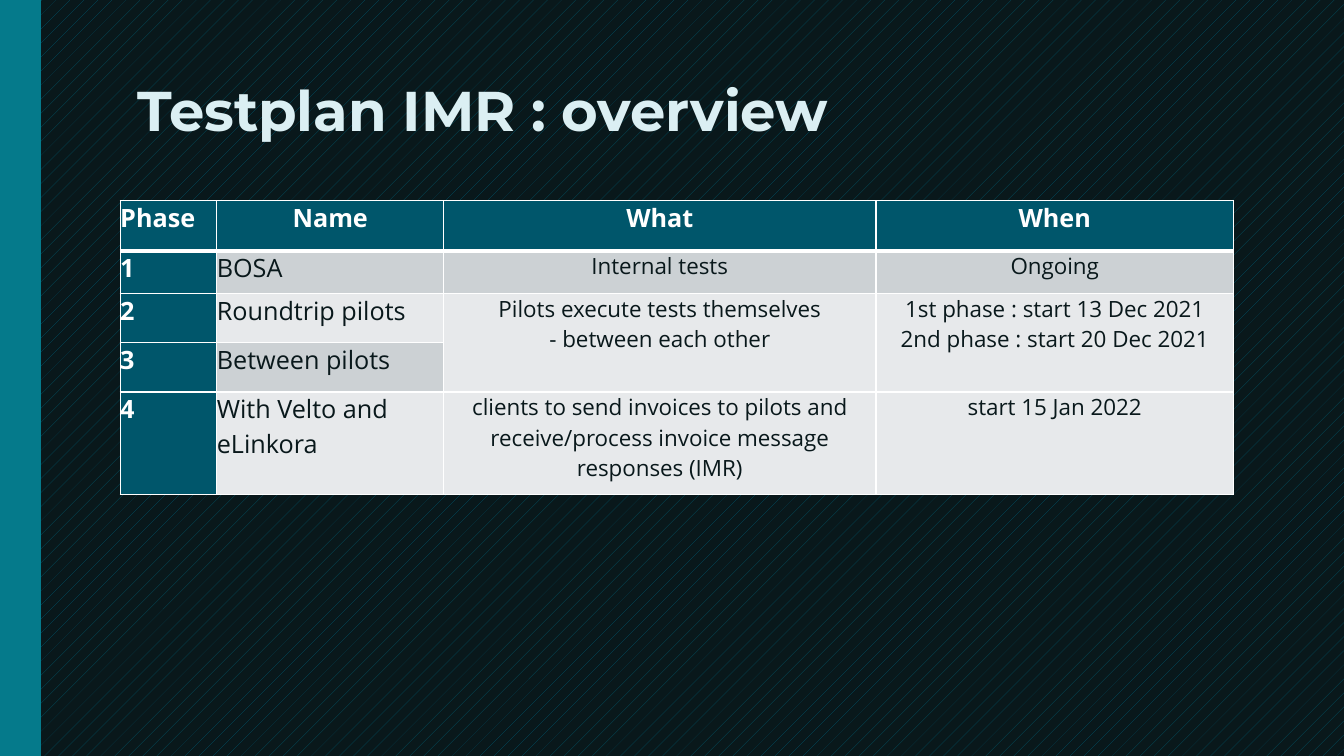
from pptx import Presentation
from pptx import util as u
from pptx.dml import color
from pptx.enum import dml, shapes, text
from pptx.oxml import parse_xml
from pptx.oxml import ns

CENTER = text.PP_ALIGN.CENTER
LEFT = text.PP_ALIGN.LEFT

COLUMN_WIDTHS = [69, 162, 308.8, 255.5]
ROW_HEIGHTS = [36, 30.2, 35.3, 35.3, 73.4]
ROWS = [
    ["Phase", "Name", "What", "When"],
    ["1", "BOSA", "Internal tests", "Ongoing"],
    ["2", "Roundtrip pilots",
     "Pilots execute tests themselves\n- between each other",
     "1st phase : start 13 Dec 2021\n2nd phase : start 20 Dec 2021"],
    ["3", "Between pilots", "", ""],
    ["4", "With Velto and eLinkora",
     "clients to send invoices to pilots and receive/process invoice message responses (IMR)",
     "start 15 Jan 2022"],
]


def rgb(value):
    return color.RGBColor.from_string(value)


def write_text(frame, content, size=18, font="Open Sans", hex_color="09181B",
               bold=False, align=LEFT, line_spacing=None):
    for index, line in enumerate(content.split("\n")):
        paragraph = frame.add_paragraph() if index else frame.paragraphs[0]
        paragraph.alignment = align
        paragraph.line_spacing = line_spacing
        run = paragraph.add_run()
        run.text = line
        run.font.size = u.Pt(size)
        run.font.name = font
        run.font.bold = bold
        run.font.color.rgb = rgb(hex_color)


class SlideBuilder:
    dark = "09181B"
    petrol = "00566B"
    teal = "057A8B"
    pale = "DBEFF3"
    white = "FFFFFF"
    bands = ["E7E9EB", "CCD1D4"]

    def __init__(self, presentation):
        self.slide = presentation.slides.add_slide(presentation.slide_layouts[6])

    def background(self):
        fill = self.slide.background.fill
        fill.patterned()
        fill.pattern = dml.MSO_PATTERN.PERCENT_5
        fill.fore_color.rgb = rgb(self.petrol)
        fill.back_color.rgb = rgb(self.dark)

    def side_bar(self, x, top, bottom, width):
        bar = self.slide.shapes.add_connector(
            shapes.MSO_CONNECTOR.STRAIGHT, u.Pt(x), u.Pt(top), u.Pt(x), u.Pt(bottom))
        bar.line.width = u.Pt(width)
        bar.line.color.rgb = rgb(self.teal)
        bar._element.spPr.append(parse_xml(f"<a:effectLst {ns.nsdecls('a')}/>"))

    def title(self, content, left, top, width, height):
        box = self.slide.shapes.add_textbox(u.Pt(left), u.Pt(top), u.Pt(width), u.Pt(height))
        frame = box.text_frame
        frame.word_wrap = True
        frame.vertical_anchor = text.MSO_ANCHOR.MIDDLE
        frame.margin_left = u.Pt(17.7)
        write_text(frame, content, size=40, font="Montserrat", hex_color=self.pale,
                   bold=True, line_spacing=0.9)

    def borders(self, cell, row):
        widths = {"L": 1, "R": 1, "T": 3 if row == 1 else 1, "B": 3 if row == 0 else 1}
        properties = cell._tc.get_or_add_tcPr()
        for side, width in widths.items():
            properties.append(parse_xml(
                f'<a:ln{side} {ns.nsdecls("a")} w="{u.Pt(width)}"><a:solidFill>'
                f'<a:srgbClr val="{self.white}"/></a:solidFill></a:ln{side}>'))

    def cell(self, cell, content, row, column):
        heading = row == 0 or column == 0
        self.borders(cell, row)
        cell.fill.solid()
        cell.fill.fore_color.rgb = rgb(self.petrol if heading else self.bands[row % 2])
        cell.margin_left = cell.margin_right = cell.margin_top = cell.margin_bottom = 0
        centered = column > 1 or (row == 0 and column == 1)
        write_text(cell.text_frame, content,
                   size=18 if heading or column == 1 else 16,
                   hex_color=self.white if heading else self.dark,
                   bold=heading, align=CENTER if centered else LEFT)

    def table(self, rows, left, top, widths, heights):
        frame = self.slide.shapes.add_table(
            len(rows), len(widths), u.Pt(left), u.Pt(top),
            u.Pt(sum(widths)), u.Pt(sum(heights)))
        table = frame.table
        table.first_row = table.horz_banding = False
        for column, width in zip(table.columns, widths):
            column.width = u.Pt(width)
        for row, height in zip(table.rows, heights):
            row.height = u.Pt(height)
        for column in (2, 3):
            table.cell(2, column).merge(table.cell(3, column))
        for row, contents in enumerate(rows):
            for column, content in enumerate(contents):
                self.cell(table.cell(row, column), content, row, column)


def main():
    presentation = Presentation()
    presentation.slide_width = u.Pt(960)
    presentation.slide_height = u.Pt(540)
    builder = SlideBuilder(presentation)
    builder.background()
    builder.side_bar(14.4, -6, 546, 30)
    builder.title("Testplan IMR : overview", 80.6, 28.8, 801.4, 104.4)
    builder.table(ROWS, 85.9, 143.3, COLUMN_WIDTHS, ROW_HEIGHTS)
    presentation.save("out.pptx")


if __name__ == "__main__":
    main()
